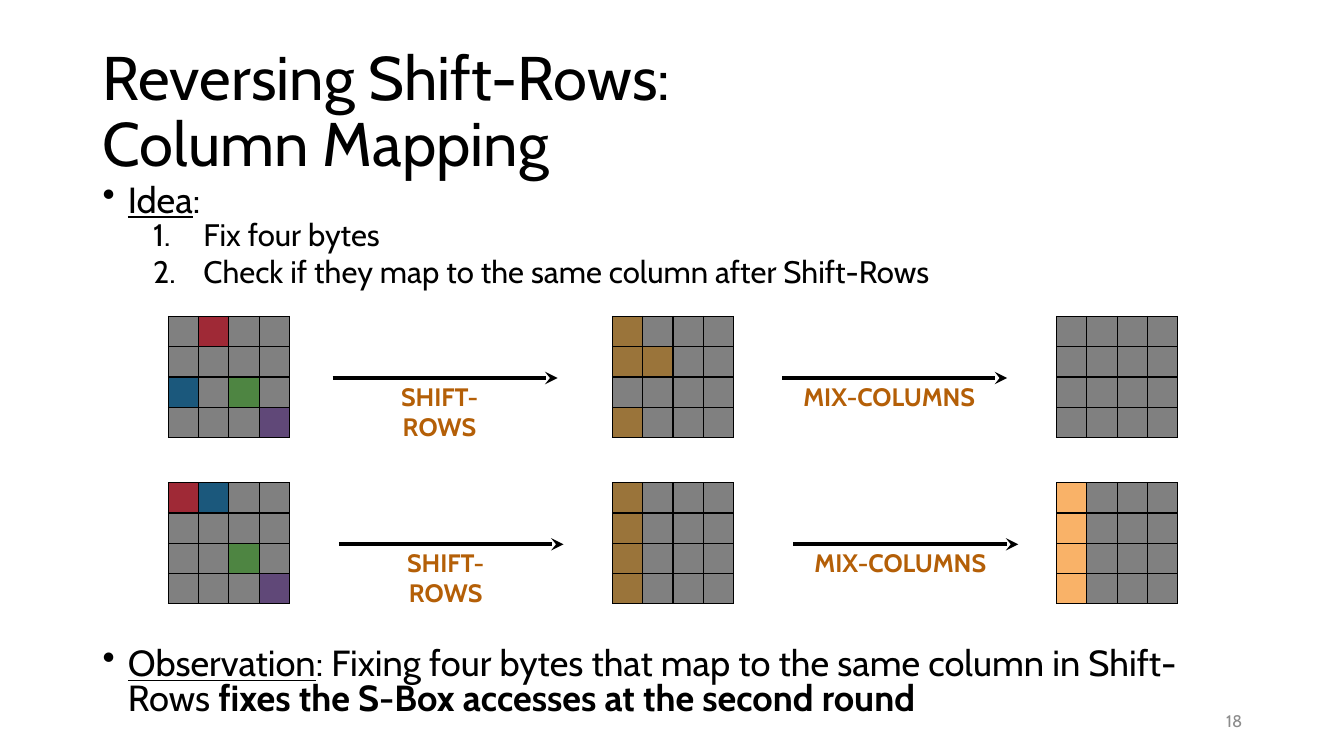
from lxml.etree import SubElement
from pptx import Presentation
from pptx.dml.color import RGBColor as Color
from pptx.enum.shapes import MSO_CONNECTOR as Connector
from pptx.enum.text import MSO_ANCHOR as Anchor, PP_ALIGN as Align
from pptx.oxml import parse_xml
from pptx.oxml.ns import nsdecls, qn
from pptx.util import Inches, Pt

COLORS = {
    "ink": "000000", "number": "8C8C8C", "label": "B45F07",
    ".": "808080", "R": "9F2936", "B": "1B587C", "G": "4E8542",
    "P": "604878", "S": "9A743A", "M": "F9B268",
}
LEFT, WIDTH = 0.92, 11.5
CELL, GRID_LEFT, GRID_TOP = 0.3, 1.67, 3.14
COLUMN_STEP, ROW_STEP = 4.405, 1.65
ARROW_LENGTH, ARROW_DROP = 2.23, 0.61

# Each letter is a key of COLORS; one row of states per example.
STATES = [
    [[".R..", "....", "B.G.", "...P"],
     ["S...", "SS..", "....", "S..."],
     ["....", "....", "....", "...."]],
    [["RB..", "....", "..G.", "...P"],
     ["S...", "S...", "S...", "S..."],
     ["M...", "M...", "M...", "M..."]],
]
STEPS = [
    [("SHIFT-ROWS", 3.3, 1.5), ("MIX-COLUMNS", 7.76, 2.1)],
    [("SHIFT-ROWS", 3.36, 1.5), ("MIX-COLUMNS", 7.87, 2.1)],
]


def add_text(page, at, paragraphs, size=18, color="ink", bold=False,
             align=Align.LEFT, anchor=Anchor.TOP, spacing=1.0):
    """Add a text box; a paragraph is a list of (text, style), style "u", "b" or ""."""
    box = page.shapes.add_textbox(*map(Inches, at))
    frame = box.text_frame
    frame.word_wrap = True
    frame.vertical_anchor = anchor
    for index, spans in enumerate(paragraphs):
        para = frame.paragraphs[0] if index == 0 else frame.add_paragraph()
        para.alignment, para.line_spacing = align, spacing
        for text, style in spans:
            for number, line in enumerate(text.split("\n")):
                if number:
                    para.add_line_break()
                span = para.add_run()
                span.text = line
                span.font.name, span.font.size = "Cabin", Pt(size)
                span.font.bold = bold or style == "b"
                span.font.underline = style == "u"
                span.font.color.rgb = Color.from_string(COLORS[color])
    return frame


def add_bullet(para, left, hanging, before, tag, **attributes):
    para.space_before = Pt(before)
    properties = para._p.get_or_add_pPr()
    properties.set("marL", str(Inches(left)))
    properties.set("indent", str(-Inches(hanging)))
    SubElement(properties, qn(tag), attributes)


deck = Presentation()
deck.slide_width, deck.slide_height = Inches(13.33), Inches(7.5)
page = deck.slides.add_slide(deck.slide_layouts[6])

add_text(page, (LEFT, 0.4, WIDTH, 1.45),
         [[("Reversing Shift-Rows:\nColumn Mapping", "")]],
         size=44, anchor=Anchor.MIDDLE, spacing=0.9)

idea = add_text(page, (LEFT, 1.79, WIDTH, 0.5), [[("Idea", "u"), (":", "")]],
                size=25.9, spacing=0.8)
steps = add_text(page, (LEFT, 2.16, WIDTH, 0.8),
                 [[("Fix four bytes", "")],
                  [("Check if they map to the same column after Shift-Rows", "")]],
                 size=22.2, spacing=0.8)
observation = add_text(
    page, (LEFT, 6.39, WIDTH, 0.9),
    [[("Observation", "u"),
      (": Fixing four bytes that map to the same column in Shift-Rows ", ""),
      ("fixes the S-Box accesses at the second round", "b")]],
    size=25.9, spacing=0.8)
for frame in (idea, observation):
    add_bullet(frame.paragraphs[0], 0.25, 0.25, 10, "a:buChar", char="•")
for para in steps.paragraphs:
    add_bullet(para, 1, 0.5, 5, "a:buAutoNum", type="arabicPeriod")

for row, states in enumerate(STATES):
    top = GRID_TOP + row * ROW_STEP
    for column, state in enumerate(states):
        side = Inches(4 * CELL)
        table = page.shapes.add_table(
            4, 4, Inches(GRID_LEFT + column * COLUMN_STEP), Inches(top), side, side).table
        table.first_row = table.horz_banding = False
        for cell, key in zip(table.iter_cells(), "".join(state)):
            cell.fill.solid()
            cell.fill.fore_color.rgb = Color.from_string(COLORS[key])
            cell.margin_left = cell.margin_right = cell.margin_top = cell.margin_bottom = 0
            SubElement(cell.text_frame.paragraphs[0]._p, qn("a:endParaRPr"), sz="800")
            for position, edge in enumerate(("lnL", "lnR", "lnT", "lnB")):
                cell._tc.get_or_add_tcPr().insert(position, parse_xml(
                    f'<a:{edge} {nsdecls("a")} w="{Pt(1)}"><a:solidFill>'
                    f'<a:srgbClr val="{COLORS["ink"]}"/></a:solidFill></a:{edge}>'))

    for label, start, label_width in STEPS[row]:
        level = top + ARROW_DROP
        arrow = page.shapes.add_connector(
            Connector.STRAIGHT, Inches(start), Inches(level),
            Inches(start + ARROW_LENGTH), Inches(level))
        arrow.line.width = Pt(3)
        arrow.line.color.rgb = Color.from_string(COLORS["ink"])
        SubElement(arrow.line._get_or_add_ln(), qn("a:tailEnd"), type="stealth")
        SubElement(arrow._element.spPr, qn("a:effectLst"))
        middle = start + 1.06
        add_text(page, (middle - label_width / 2, level - 0.02, label_width, 0.4),
                 [[(label, "")]], color="label", bold=True, align=Align.CENTER)

add_text(page, (9.42, 6.95, 3, 0.4), [[("18", "")]], size=12, color="number",
         align=Align.RIGHT, anchor=Anchor.MIDDLE)

deck.save("out.pptx")
